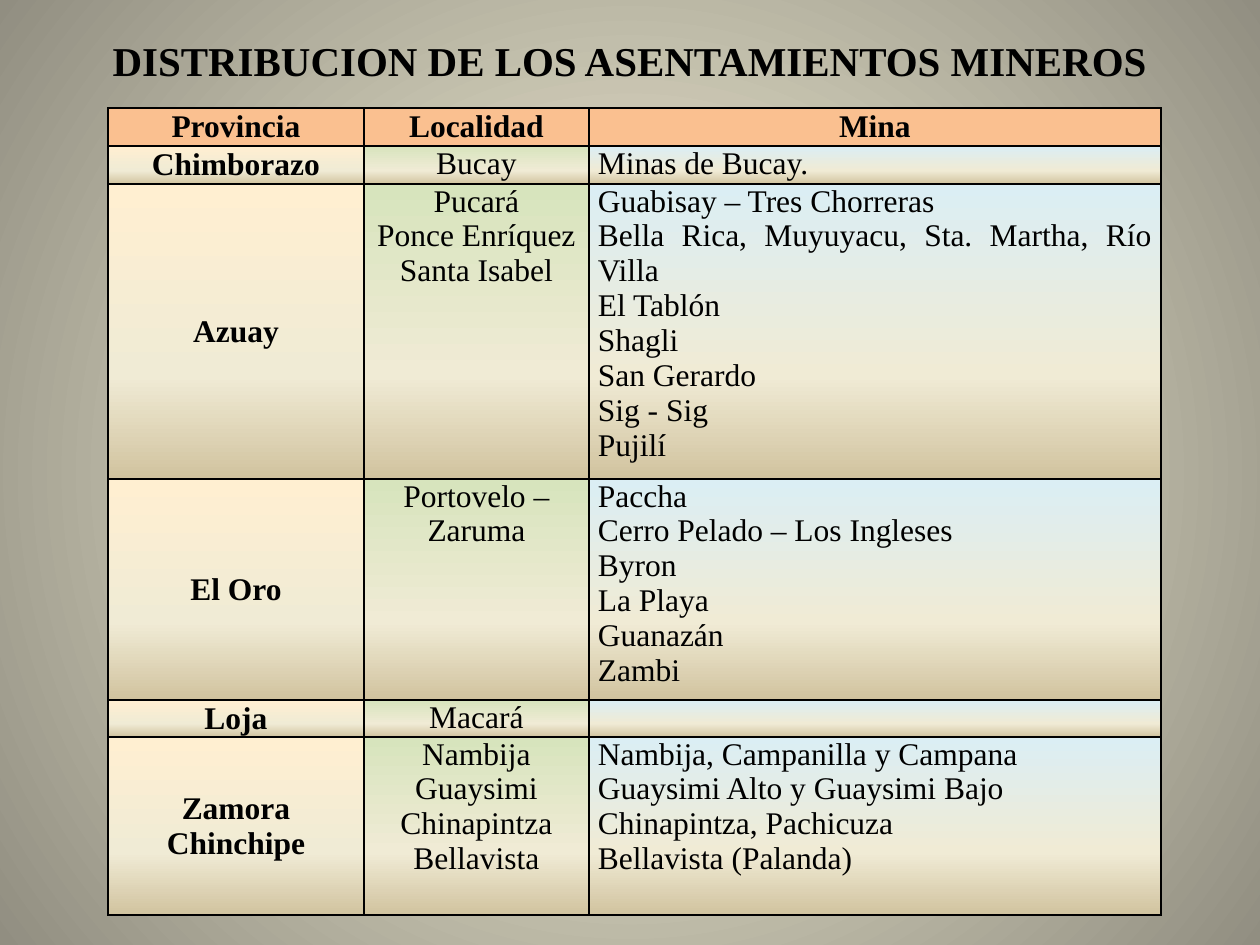
from lxml.etree import SubElement
from pptx import Presentation
from pptx.dml.color import RGBColor
from pptx.enum.text import MSO_ANCHOR, PP_ALIGN
from pptx.oxml.ns import qn
from pptx.util import Emu, Pt

PIXELS_PER_INCH = 126
FONT = "Times New Roman"
BLACK = RGBColor(0x00, 0x00, 0x00)
ORANGE = RGBColor(0xFA, 0xC0, 0x90)
CREAM = RGBColor(0xFF, 0xEF, 0xD1)
GREEN = RGBColor(0xD7, 0xE4, 0xBD)
BLUE = RGBColor(0xDB, 0xEE, 0xF4)
IVORY = RGBColor(0xF0, 0xEB, 0xD5)
SAND = RGBColor(0xD1, 0xC3, 0x9F)
PALE = RGBColor(0xFC, 0xF7, 0xDD)
GREY = RGBColor(0x91, 0x8E, 0x81)

COLUMN_WIDTHS = [256, 225, 572]
ROW_HEIGHTS = [38, 38, 295, 221, 37, 178]
COLUMN_COLOURS = [CREAM, GREEN, BLUE]
COLUMN_ALIGNMENTS = [PP_ALIGN.CENTER, PP_ALIGN.CENTER, PP_ALIGN.JUSTIFY]
HEADINGS = ["Provincia", "Localidad", "Mina"]
SETTLEMENTS = [
    (["Chimborazo"], ["Bucay"], ["Minas de Bucay."]),
    (
        ["Azuay"],
        ["Pucará", "Ponce Enríquez", "Santa Isabel"],
        ["Guabisay – Tres Chorreras", "Bella Rica, Muyuyacu, Sta. Martha, Río Villa",
         "El Tablón", "Shagli", "San Gerardo", "Sig - Sig", "Pujilí"],
    ),
    (
        ["El Oro"],
        ["Portovelo – Zaruma"],
        ["Paccha", "Cerro Pelado – Los Ingleses", "Byron", "La Playa", "Guanazán", "Zambi"],
    ),
    (["Loja"], ["Macará"], [""]),
    (
        ["Zamora Chinchipe"],
        ["Nambija", "Guaysimi", "Chinapintza", "Bellavista"],
        ["Nambija, Campanilla y Campana", "Guaysimi Alto y Guaysimi Bajo",
         "Chinapintza, Pachicuza", "Bellavista (Palanda)"],
    ),
]


def px(length):
    return Emu(round(length * 914400 / PIXELS_PER_INCH))


def add_gradient(parent, stops):
    gradient = SubElement(parent, qn("a:gradFill"), rotWithShape="1")
    stop_list = SubElement(gradient, qn("a:gsLst"))
    for position, colour in stops:
        stop = SubElement(stop_list, qn("a:gs"), pos=str(position * 1000))
        SubElement(stop, qn("a:srgbClr"), val=str(colour))
    return gradient


def paint_background(page):
    page.background.fill.solid()
    properties = page.background.fill._xPr
    properties.remove(properties.find(qn("a:solidFill")))
    gradient = add_gradient(properties, [(0, PALE), (100, GREY)])
    properties.insert(0, gradient)
    route = SubElement(gradient, qn("a:path"), path="circle")
    SubElement(route, qn("a:fillToRect"), l="50000", t="50000", r="50000", b="50000")


def write_lines(frame, lines, alignment, size, bold):
    for index, line in enumerate(lines):
        para = frame.add_paragraph() if index else frame.paragraphs[0]
        para.alignment = alignment
        span = para.add_run()
        span.text = line
        span.font.name = FONT
        span.font.size = Pt(size)
        span.font.bold = bold
        span.font.color.rgb = BLACK


def add_borders(cell):
    properties = cell._tc.get_or_add_tcPr()
    for side in ("L", "R", "T", "B"):
        line = SubElement(properties, qn(f"a:ln{side}"), w=str(Pt(1)))
        solid = SubElement(line, qn("a:solidFill"))
        SubElement(solid, qn("a:srgbClr"), val=str(BLACK))


def fill_cell(cell, lines, alignment, bold):
    cell.margin_left = cell.margin_right = px(9)
    cell.margin_top = cell.margin_bottom = 0
    cell.vertical_anchor = MSO_ANCHOR.MIDDLE if bold else MSO_ANCHOR.TOP
    write_lines(cell.text_frame, lines, alignment, 18, bold)
    add_borders(cell)


def place_title(page, left, top, width, height):
    title = page.shapes.title
    title.left, title.top, title.width, title.height = map(px, (left, top, width, height))
    title.text_frame.word_wrap = True
    title.text_frame.vertical_anchor = MSO_ANCHOR.MIDDLE
    write_lines(title.text_frame, ["DISTRIBUCION DE LOS ASENTAMIENTOS MINEROS"],
                PP_ALIGN.CENTER, 23.4, True)


def place_table(page, left, top):
    width, height = sum(COLUMN_WIDTHS), sum(ROW_HEIGHTS)
    table = page.shapes.add_table(len(ROW_HEIGHTS), len(COLUMN_WIDTHS),
                                  px(left), px(top), px(width), px(height)).table
    for column, column_width in zip(table.columns, COLUMN_WIDTHS):
        column.width = px(column_width)
    for row, row_height in zip(table.rows, ROW_HEIGHTS):
        row.height = px(row_height)
    for column, heading in enumerate(HEADINGS):
        cell = table.cell(0, column)
        fill_cell(cell, [heading], PP_ALIGN.CENTER, True)
        cell.fill.solid()
        cell.fill.fore_color.rgb = ORANGE
    for row, settlement in enumerate(SETTLEMENTS, start=1):
        for column, lines in enumerate(settlement):
            cell = table.cell(row, column)
            fill_cell(cell, lines, COLUMN_ALIGNMENTS[column], column == 0)
            stops = [(0, COLUMN_COLOURS[column]), (65, IVORY), (100, SAND)]
            gradient = add_gradient(cell._tc.get_or_add_tcPr(), stops)
            SubElement(gradient, qn("a:lin"), ang="5400000", scaled="0")


def main():
    deck = Presentation()
    deck.slide_width, deck.slide_height = px(1260), px(945)
    page = deck.slides.add_slide(deck.slide_layouts[0])
    subtitle = page.placeholders[1].element
    subtitle.getparent().remove(subtitle)
    paint_background(page)
    place_title(page, 94, 20, 1071, 81)
    place_table(page, 108, 108)
    deck.save("out.pptx")


if __name__ == "__main__":
    main()
